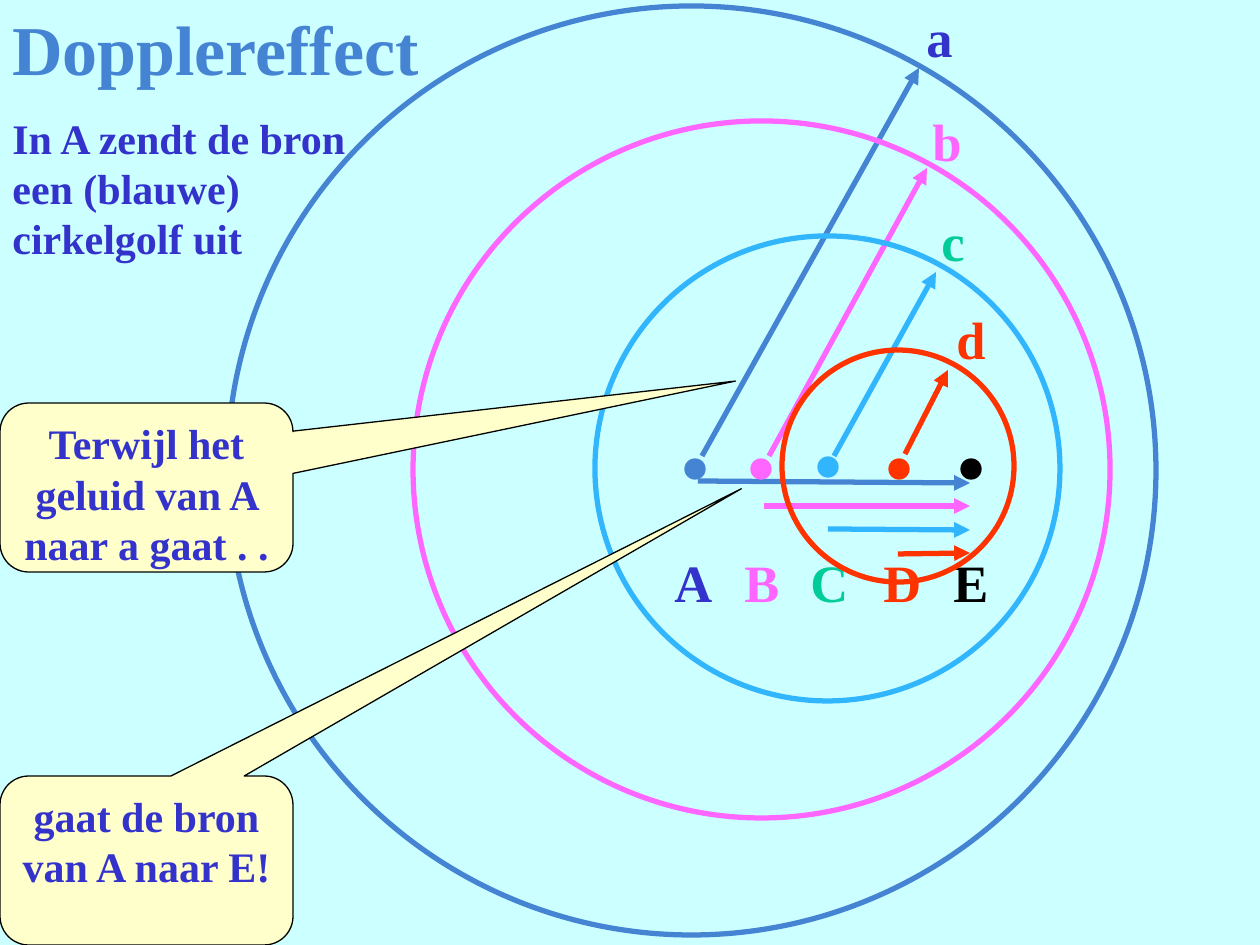
from dataclasses import dataclass

from lxml import etree
from pptx import Presentation
from pptx.dml.color import RGBColor
from pptx.enum.shapes import MSO_CONNECTOR, MSO_SHAPE
from pptx.enum.text import MSO_ANCHOR, PP_ALIGN
from pptx.oxml.ns import qn
from pptx.util import Pt

OVAL = MSO_SHAPE.OVAL
CALLOUT = MSO_SHAPE.ROUNDED_RECTANGULAR_CALLOUT
STRAIGHT = MSO_CONNECTOR.STRAIGHT
MIDDLE, TOP = MSO_ANCHOR.MIDDLE, MSO_ANCHOR.TOP
CENTER, LEFT = PP_ALIGN.CENTER, PP_ALIGN.LEFT

EMU_PER_PX = 914400 / 126
WIDTH, HEIGHT = 1260, 945
FONT = "Times New Roman"
SKY, CREAM, BLACK = "CCFFFF", "FFFFCC", "000000"
NAVY, BLUE, PINK = "3333CC", "4584D3", "FF66FF"
CYAN, GREEN, RED = "31B6FD", "00CC99", "FF3300"
DOT = 20
LABEL_TOP, LABEL_HEIGHT = 544, 76
ARROW_END = 970


@dataclass
class Label:
    text: str
    x: int
    y: int
    w: int
    color: str


@dataclass
class Wave:
    """A wave front: its circle, its radius arrow and the source's way to E."""
    color: str
    circle: tuple[int, int, int]  # left, top, diameter
    dot: tuple[int, int]
    ray: tuple[int, int, int, int]
    travel: tuple[int, int, int]  # start x, start y, end y


@dataclass
class Callout:
    text: str
    y: int
    tip: tuple[float, float]


LABELS = [
    Label("E", 941, LABEL_TOP, 53, BLACK),
    Label("C", 798, LABEL_TOP, 73, GREEN),
    Label("c", 929, 203, 53, GREEN),
    Label("B", 732, LABEL_TOP, 53, PINK),
    Label("b", 920, 103, 53, PINK),
    Label("D", 871, LABEL_TOP, 63, RED),
    Label("d", 944, 301, 63, RED),
    Label("A", 662, LABEL_TOP, 73, NAVY),
    Label("a", 914, -1, 53, NAVY),
]
WAVES = [
    Wave(BLUE, (227, 6, 929), (685, 459), (702, 456, 919, 68), (698, 481, 483)),
    Wave(PINK, (413, 121, 697), (751, 459), (769, 456, 927, 168), (764, 506, 506)),
    Wave(CYAN, (595, 236, 465), (818, 457), (834, 456, 936, 272), (828, 529, 530)),
    Wave(RED, (782, 350, 232), (889, 459), (905, 454, 948, 370), (898, 554, 553)),
]
CALLOUTS = [
    Callout("Terwijl het geluid van A naar a gaat . .", 403, (2.01, -0.63)),
    Callout("gaat de bron van A naar E!", 776, (2.03, -2.2)),
]


def px(n: int) -> int:
    return round(n * EMU_PER_PX)


def rgb(color: str) -> RGBColor:
    return RGBColor.from_string(color)


def write(sp, text: str, size: int, color: str, align=LEFT, anchor=TOP) -> None:
    tf = sp.text_frame
    tf.word_wrap = True
    tf.vertical_anchor = anchor
    p = tf.paragraphs[0]
    p.text = text
    p.alignment = align
    p.font.name, p.font.size, p.font.bold = FONT, Pt(size), True
    p.font.color.rgb = rgb(color)


def add_text(s, text: str, x: int, y: int, w: int, h: int, size: int,
             color: str, anchor=TOP) -> None:
    sp = s.shapes.add_textbox(px(x), px(y), px(w), px(h))
    write(sp, text, size, color, anchor=anchor)


def add_shape(s, kind, x: int, y: int, w: int, h: int, fill: str | None,
              line: str, weight: float):
    sp = s.shapes.add_shape(kind, px(x), px(y), px(w), px(h))
    sp.shadow.inherit = False
    if fill:
        sp.fill.solid()
        sp.fill.fore_color.rgb = rgb(fill)
    else:
        sp.fill.background()
    sp.line.color.rgb = rgb(line)
    sp.line.width = Pt(weight)
    return sp


def add_arrow(s, x1: int, y1: int, x2: int, y2: int, color: str) -> None:
    c = s.shapes.add_connector(STRAIGHT, px(x1), px(y1), px(x2), px(y2))
    c.line.color.rgb = rgb(color)
    c.line.width = Pt(3)
    etree.SubElement(c.line._get_or_add_ln(), qn("a:tailEnd"), type="triangle")
    etree.SubElement(c._element.spPr, qn("a:effectLst"))


def add_dot(s, x: int, y: int, color: str) -> None:
    add_shape(s, OVAL, x, y, DOT, DOT, color, color, 0.75)


def add_wave(s, wave: Wave) -> None:
    x, y, y_end = wave.travel
    add_arrow(s, x, y, ARROW_END, y_end, wave.color)
    add_arrow(s, *wave.ray, wave.color)
    left, top, size = wave.circle
    add_shape(s, OVAL, left, top, size, size, None, wave.color, 3)
    add_dot(s, *wave.dot, wave.color)


def add_callout(s, callout: Callout) -> None:
    sp = add_shape(s, CALLOUT, 0, callout.y, 293, 169, CREAM, BLACK, 0.75)
    sp.adjustments[0], sp.adjustments[1] = callout.tip
    sp.adjustments[2] = 0.17
    write(sp, callout.text, 24, NAVY, CENTER)


def main() -> None:
    prs = Presentation()
    prs.slide_width, prs.slide_height = px(WIDTH), px(HEIGHT)
    s = prs.slides.add_slide(prs.slide_layouts[6])
    s.background.fill.solid()
    s.background.fill.fore_color.rgb = rgb(SKY)

    add_text(s, "Dopplereffect", 0, 0, WIDTH, 95, 40, BLUE, MIDDLE)
    for label in LABELS:
        add_text(s, label.text, label.x, label.y, label.w, LABEL_HEIGHT, 30,
                 label.color)
    for wave in WAVES:
        add_wave(s, wave)
    add_dot(s, 961, 459, BLACK)
    for callout in CALLOUTS:
        add_callout(s, callout)
    add_text(s, "In A zendt de bron een (blauwe) cirkelgolf uit",
             0, 106, 382, 164, 24, NAVY)
    prs.save("out.pptx")


if __name__ == "__main__":
    main()
